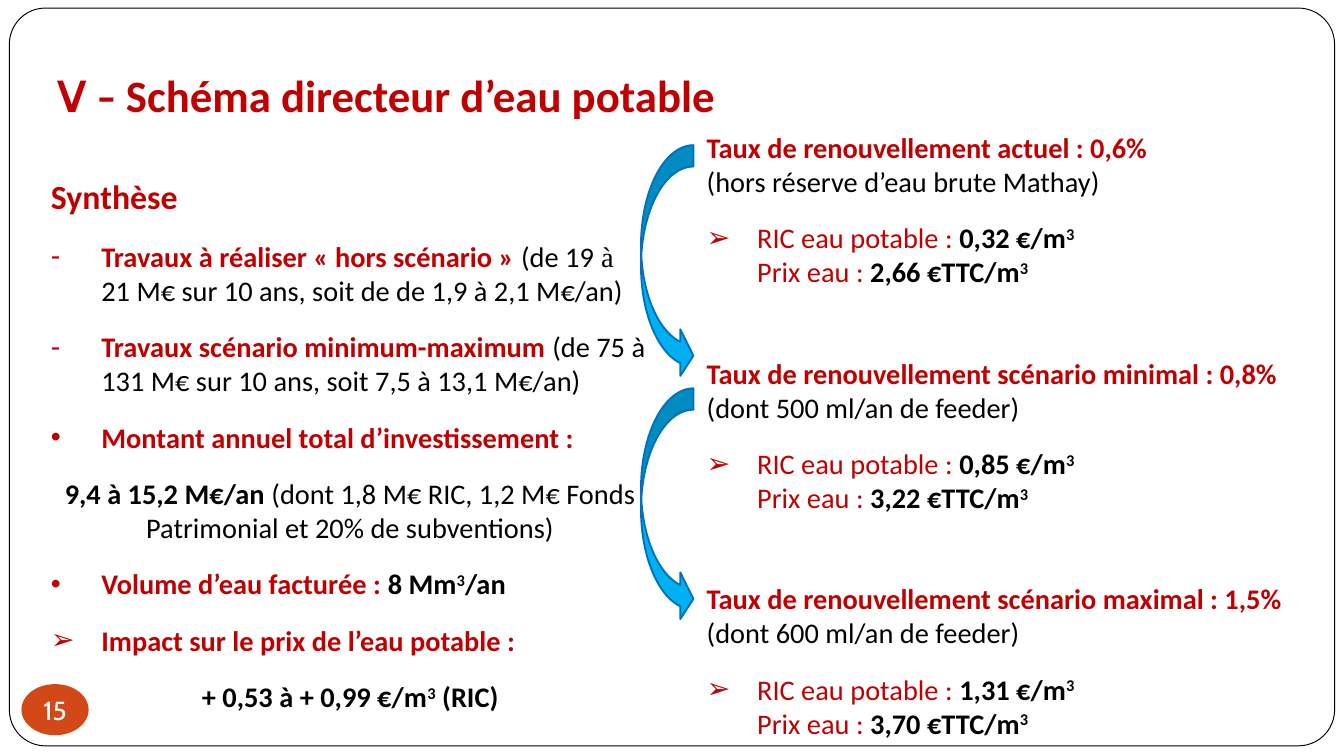
from lxml import etree
from pptx import Presentation
from pptx.dml.color import RGBColor
from pptx.enum.shapes import MSO_SHAPE
from pptx.enum.text import MSO_ANCHOR, PP_ALIGN
from pptx.oxml.ns import qn
from pptx.util import Pt

RED = RGBColor(0xC0, 0x00, 0x00)
BLACK = RGBColor(0x00, 0x00, 0x00)
WHITE = RGBColor(0xFF, 0xFF, 0xFF)
ORANGE = RGBColor(0xD3, 0x48, 0x17)
SKY = RGBColor(0x00, 0xB0, 0xF0)
BLUE = RGBColor(0x00, 0x70, 0xC0)

ROUNDED = MSO_SHAPE.ROUNDED_RECTANGLE
OVAL = MSO_SHAPE.OVAL
CURVED = MSO_SHAPE.CURVED_RIGHT_ARROW
CENTER = PP_ALIGN.CENTER
TOP, MIDDLE = MSO_ANCHOR.TOP, MSO_ANCHOR.MIDDLE

BODY, INDENT, GAP = 15.2, 27, 12

# Run formats
STRONG_RED = {"bold": True, "color": RED}
PLAIN_RED = {"bold": False, "color": RED}
STRONG = {"bold": True, "color": BLACK}
PLAIN = {"bold": False, "color": BLACK}
SUP = {**STRONG, "sup": True}
HEAD = {**STRONG_RED, "size": 18.1}
TITLE = {**STRONG_RED, "size": 24}
NUMBER = {"bold": False, "color": WHITE, "size": 14, "name": "Cabin"}


class Deck:
    def __init__(self, slide, font):
        self.s, self.font = slide, font

    def shape(self, kind, box, fill, line=None, width=1, adj=()):
        sp = self.s.shapes.add_shape(kind, *map(Pt, box))
        sp.shadow.inherit = False
        sp.fill.solid()
        sp.fill.fore_color.rgb = fill
        if line is None:
            sp.line.fill.background()
        else:
            sp.line.color.rgb = line
            sp.line.width = Pt(width)
        for i, value in enumerate(adj):
            sp.adjustments[i] = value
        return sp

    def text(self, box, paragraphs, anchor=TOP):
        sp = self.s.shapes.add_textbox(*map(Pt, box))
        tf = sp.text_frame
        tf.word_wrap = True
        tf.vertical_anchor = anchor
        self.fill_text(tf, paragraphs)

    def fill_text(self, tf, paragraphs):
        for i, (opts, runs) in enumerate(paragraphs):
            p = tf.add_paragraph() if i else tf.paragraphs[0]
            p.space_before = Pt(opts.get("before", 0))
            if "align" in opts:
                p.alignment = opts["align"]
            if "bullet" in opts:
                self.bullet(p, opts["bullet"])
            for text, style in runs:
                if text == "\n":
                    p.add_line_break()
                else:
                    self.run(p, text, style)

    def run(self, p, text, style):
        r = p.add_run()
        r.text = text
        fmt = {"name": self.font, "size": BODY, **style}
        r.font.color.rgb = fmt.pop("color")
        if fmt.pop("sup", False):
            r.font._element.set("baseline", "30000")
        fmt["size"] = Pt(fmt["size"])
        for key, value in fmt.items():
            setattr(r.font, key, value)

    def bullet(self, p, char):
        pPr = p._p.get_or_add_pPr()
        pPr.set("marL", str(Pt(INDENT)))
        pPr.set("indent", str(-Pt(INDENT)))
        etree.SubElement(pPr, qn("a:buFont")).set("typeface", "Arial")
        etree.SubElement(pPr, qn("a:buChar")).set("char", char)


def item(char, *runs):
    return {"before": GAP, "bullet": char}, runs


def centered(*runs):
    return {"before": GAP, "align": CENTER}, runs


def rate(before, heading, note, ric, price):
    """Heading and bullet for one renewal rate."""
    br = ("\n", None)
    return [
        ({"before": before}, [(heading, STRONG_RED), br, (note, PLAIN)]),
        item("➢", ("RIC eau potable : ", PLAIN_RED), (f"{ric} €/m", STRONG),
             ("3", SUP), br, ("Prix eau : ", PLAIN_RED),
             (f"{price} €TTC/m", STRONG), ("3", SUP)),
    ]


def main():
    prs = Presentation()
    prs.slide_width, prs.slide_height = Pt(720), Pt(405)
    deck = Deck(prs.slides.add_slide(prs.slide_layouts[6]), "Calibri")

    # Frame
    deck.shape(ROUNDED, (5, 4.3, 710, 395.3), WHITE, BLACK, 0.5, [0.049])

    # Summary
    deck.text((20.2, 90.7, 334.8, 302.4), [
        ({}, [("Synthèse", HEAD)]),
        item("-", ("Travaux à réaliser « hors scénario »", STRONG_RED),
             (" (de 19", PLAIN), (" à ", {**PLAIN, "name": "Times New Roman"}),
             ("21 M€ sur 10 ans, soit de de 1,9 à 2,1 M€/an)", PLAIN)),
        item("-", ("Travaux scénario minimum-maximum ", STRONG_RED),
             ("(de 75 à 131 M€ sur 10 ans, soit 7,5 à 13,1 M€/an)", PLAIN)),
        item("•", ("Montant annuel total d’investissement :", STRONG_RED)),
        centered(("9,4 à 15,2 M€/an ", STRONG),
                 ("(dont 1,8 M€ RIC, 1,2 M€ Fonds Patrimonial et 20% "
                  "de subventions)", PLAIN)),
        item("•", ("Volume d’eau facturée : ", STRONG_RED),
             ("8 Mm", STRONG), ("3", SUP), ("/an", STRONG)),
        item("➢", ("Impact sur le prix de l’eau potable :", STRONG_RED)),
        centered(("+ 0,53 à + 0,99 €/m", STRONG), ("3", SUP),
                 (" (RIC)", STRONG)),
    ])

    # Title
    deck.text((23.8, 16.6, 697.7, 67.7), [
        ({}, [("V - ", {**TITLE, "name": "Cabin"}),
              ("Schéma directeur d’eau potable", TITLE)]),
    ], MIDDLE)

    # Slide number
    tf = deck.shape(OVAL, (11.5, 366.5, 36, 27.4), ORANGE).text_frame
    tf.margin_left = tf.margin_right = tf.margin_top = tf.margin_bottom = 0
    tf.word_wrap = False
    tf.vertical_anchor = MIDDLE
    deck.fill_text(tf, [({"align": CENTER}, [("15", NUMBER)])])

    # Renewal rates
    label = "Taux de renouvellement"
    deck.text((371.5, 66.2, 339.8, 391), [
        *rate(0, f"{label} actuel : 0,6%",
              "(hors réserve d’eau brute Mathay)", "0,32", "2,66"),
        *rate(36, f"{label} scénario minimal : 0,8%",
              "(dont 500 ml/an de feeder)", "0,85", "3,22"),
        *rate(36, f"{label} scénario maximal : 1,5%",
              "(dont 600 ml/an de feeder)", "1,31", "3,70"),
    ])

    # Arrows from one rate to the next
    for top in (77.8, 208.1):
        deck.shape(CURVED, (343.4, top, 28.1, 125.3), SKY, BLUE, 1,
                   [0.407, 0.89, 0.25])

    prs.save("out.pptx")


if __name__ == "__main__":
    main()
